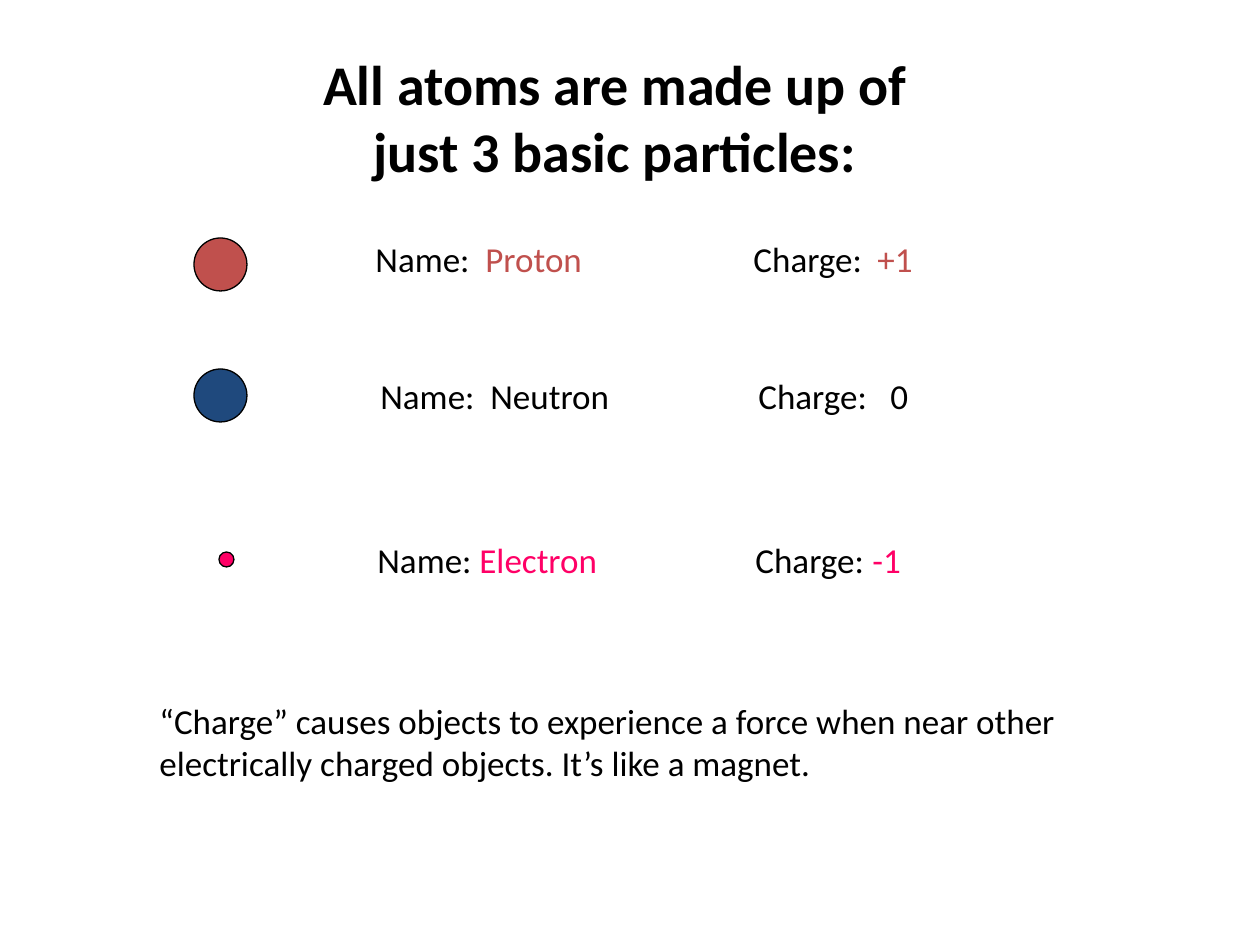
"""Build a slide on the three basic particles of the atom."""
from lxml.etree import SubElement
from pptx import Presentation
from pptx.dml.color import RGBColor
from pptx.enum.shapes import MSO_SHAPE as Shape
from pptx.enum.text import MSO_ANCHOR as Anchor, PP_ALIGN as Align
from pptx.oxml.ns import qn
from pptx.util import Pt

PX = 914400 / 126
BLACK = RGBColor(0x00, 0x00, 0x00)
RED = RGBColor(0xC0, 0x50, 0x4D)
BLUE = RGBColor(0x1F, 0x49, 0x7D)
PINK = RGBColor(0xFF, 0x00, 0x66)


def px(*lengths):
    return [round(length * PX) for length in lengths]


def add_span(para, text, size=20, color=BLACK, bold=False):
    span = para.add_run()
    span.text = text
    span.font.name = "Calibri"
    span.font.size = Pt(size)
    span.font.color.rgb = color
    span.font.bold = bold


deck = Presentation()
deck.slide_width, deck.slide_height = px(1260, 945)
page = deck.slides.add_slide(deck.slide_layouts[5])

title = page.shapes.title
title.left, title.top, title.width, title.height = px(309, 43, 612, 149)
title.text_frame.vertical_anchor = Anchor.TOP
title_para = title.text_frame.paragraphs[0]
title_para.alignment = Align.CENTER
add_span(title_para, "All atoms are made up of just 3 basic particles:", size=32, bold=True)

particles = [
    ("Proton", "+1", RED, RED, (194, 238, 53), (363, 231), (110, 378, 502)),
    ("Neutron", "0", BLUE, BLACK, (194, 369, 53), (368, 368), (110, 378, 510)),
    ("Electron", "-1", PINK, PINK, (219, 552, 15), (365, 532), (102, 378, 495)),
]
for name, charge, fill, color, (left, top, size), corner, stops in particles:
    ball = page.shapes.add_shape(Shape.OVAL, *px(left, top, size, size))
    ball.shadow.inherit = False
    ball.fill.solid()
    ball.fill.fore_color.rgb = fill
    ball.line.color.rgb = BLACK
    ball.line.width = Pt(0.75)

    box = page.shapes.add_textbox(*px(*corner, 777, 54))
    box.text_frame.word_wrap = True
    para = box.text_frame.paragraphs[0]
    tabs = SubElement(para._p.get_or_add_pPr(), qn("a:tabLst"))
    for stop in px(*stops):
        SubElement(tabs, qn("a:tab"), pos=str(stop), algn="l")
    add_span(para, "Name:\t")
    add_span(para, name, color=color)
    add_span(para, "\tCharge:\t")
    add_span(para, charge, color=color)

note = page.shapes.add_textbox(*px(147, 693, 966, 97))
note.text_frame.word_wrap = True
add_span(
    note.text_frame.paragraphs[0],
    "“Charge” causes objects to experience a force when near other "
    "electrically charged objects. It’s like a magnet.",
)

deck.save("out.pptx")
